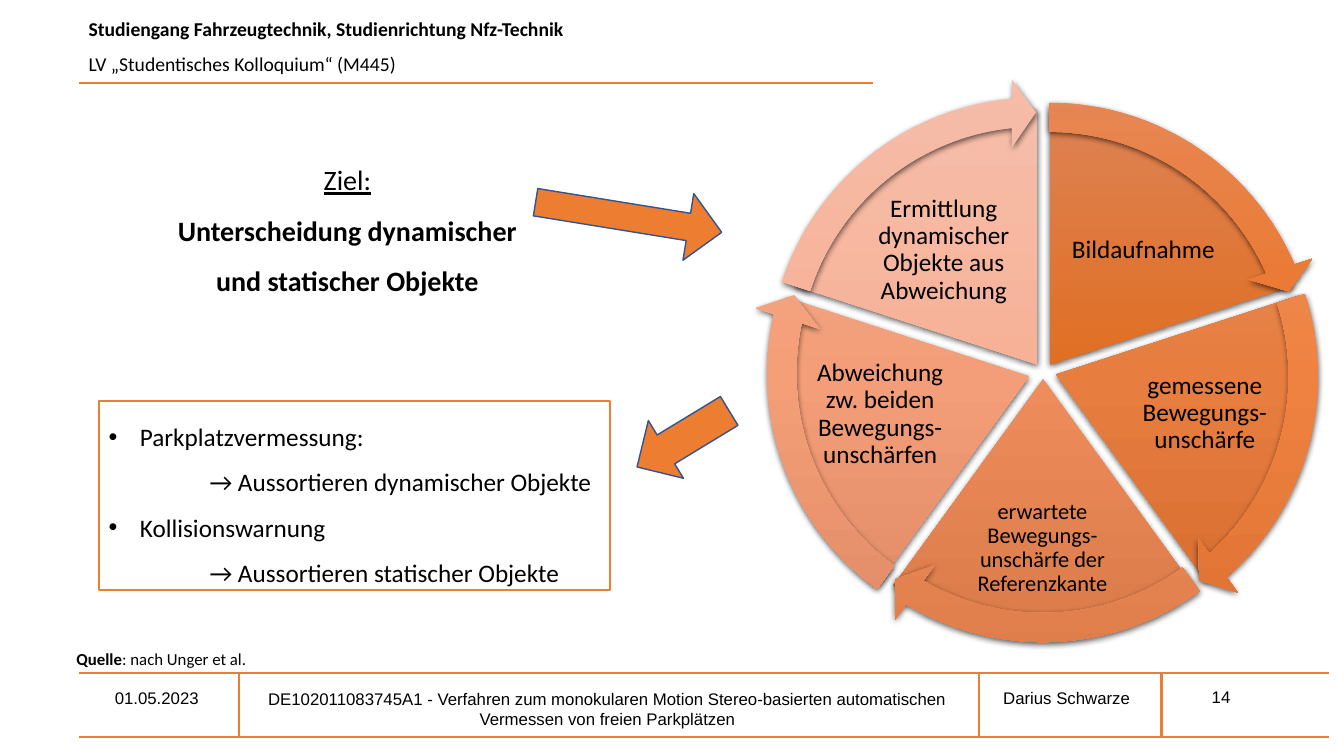
from lxml.etree import SubElement
from pptx import Presentation
from pptx.dml.color import RGBColor
from pptx.enum.shapes import MSO_CONNECTOR, MSO_SHAPE
from pptx.enum.text import MSO_ANCHOR as Anchor, PP_ALIGN as Align
from pptx.oxml.ns import qn
from pptx.util import Inches, Pt

COLORS = {"orange": "ED7D31", "outline": "325491", "text": "000000"}
FULL_TURN = 216
SEGMENT_TURN = FULL_TURN / 5
HEAD_TURN = 3.275
PIE_SIZE = 5.05
RING_SIZE = 5.67

SEGMENTS = [
    dict(step=0, text="Bildaufnahme", size=18, box=(10.53, 1.94, 1.62, 1.08),
         pie=(7.89, 1.09), pie_fill=("DD8254", "E06F23", "D06116"),
         ring=(7.57, 0.83), ring_fill=("E78756", "EB7526", "DB6618")),
    dict(step=1, text="gemessene Bewegungs-unschärfe", size=18, box=(11.2, 3.5, 1.5, 1.2),
         pie=(7.95, 1.19), pie_fill=("E48E63", "E77D3F", "D66D30"),
         ring=(7.59, 0.9), ring_fill=("EB9265", "EF8241", "DD7131")),
    dict(step=2, text="erwartete Bewegungs-unschärfe der Referenzkante", size=16,
         box=(9.62, 4.78, 1.44, 1.32),
         pie=(7.82, 1.24), pie_fill=("EB9C77", "EE8D5B", "DB7B49"),
         ring=(7.51, 0.89), ring_fill=("EF9F79", "F2905D", "DF7D4B")),
    dict(step=4, text="Ermittlung dynamischer Objekte aus Abweichung", size=18,
         box=(8.55, 1.94, 1.62, 1.08),
         pie=(7.76, 1.09), pie_fill=("F6BDA9", "F7B197", "E29B80"),
         ring=(7.44, 0.78), ring_fill=("F6BCA8", "F7B096", "E29A7F")),
    dict(step=3, text="Abweichung zw. beiden Bewegungs-unschärfen", size=18,
         box=(7.98, 3.51, 1.5, 1.2),
         pie=(7.68, 1.21), pie_fill=("F0AB8F", "F39E78", "DF8A64"),
         ring=(7.42, 0.87), ring_fill=("F2AC8F", "F59F79", "E08A65")),
]


def rgb(name):
    return RGBColor.from_string(COLORS[name])


def place(box):
    return [Inches(value) for value in box]


def set_bullet(para):
    properties = para._p.get_or_add_pPr()
    SubElement(properties, qn("a:buFont"), typeface="Arial")
    SubElement(properties, qn("a:buChar"), char="•")


def set_indent(para, left, hanging=0):
    properties = para._p.get_or_add_pPr()
    properties.set("marL", str(Inches(left)))
    properties.set("indent", str(-Inches(hanging)))


def write_para(para, spans, size, font="Calibri", **formats):
    for name, value in formats.items():
        setattr(para, name, value)
    for text, styles in spans:
        span = para.add_run()
        span.text = text
        span.font.color.rgb = rgb("text")
        for name, value in dict(styles, name=font, size=Pt(size)).items():
            setattr(span.font, name, value)


def next_para(frame, number):
    return frame.add_paragraph() if number else frame.paragraphs[0]


def add_text(shapes, box, lines, size, anchor=Anchor.TOP, inset=None, gap=0, **formats):
    frame = shapes.add_textbox(*place(box)).text_frame
    frame.word_wrap = True
    frame.vertical_anchor = anchor
    if inset is not None:
        for side in ("left", "top", "right", "bottom"):
            setattr(frame, f"margin_{side}", Inches(inset))
    for number, spans in enumerate(lines):
        para = next_para(frame, number)
        if number and gap:
            para.space_before = Pt(gap)
        write_para(para, spans, size, **formats)


def add_rule(page, left, top, right, bottom):
    rule = page.shapes.add_connector(MSO_CONNECTOR.STRAIGHT, *place((left, top, right, bottom)))
    rule.line.color.rgb = rgb("orange")
    rule.line.width = Pt(1.5)
    SubElement(rule._element.spPr, qn("a:effectLst"))


def add_block_arrow(page, box, rotation, shaft):
    arrow = page.shapes.add_shape(MSO_SHAPE.DOWN_ARROW, *place(box))
    arrow.shadow.inherit = False
    arrow.rotation = rotation
    arrow.adjustments[0] = shaft
    arrow.adjustments[1] = 0.5
    arrow.fill.solid()
    arrow.fill.fore_color.rgb = rgb("orange")
    arrow.line.color.rgb = rgb("outline")
    arrow.line.width = Pt(1)


def add_cycle_part(shapes, kind, corner, size, adjustments, shades):
    part = shapes.add_shape(kind, *place((*corner, size, size)))
    for number, value in enumerate(adjustments):
        part.adjustments[number] = value
    part.fill.gradient()
    part.fill.gradient_angle = 270
    stops = part._element.spPr.find(qn("a:gradFill")).find(qn("a:gsLst"))
    for stop in list(stops):
        stops.remove(stop)
    for number, shade in enumerate(shades):
        stop = SubElement(stops, qn("a:gs"), pos=str(number * 50000))
        SubElement(stop, qn("a:srgbClr"), val=shade)
    part.line.fill.background()
    part.shadow.inherit = False
    effects = part._element.spPr.find(qn("a:effectLst"))
    shadow = SubElement(effects, qn("a:outerShdw"), blurRad=str(Pt(4.5)), dist=str(Pt(1.5)),
                        dir="5400000", algn="ctr", rotWithShape="0")
    black = SubElement(shadow, qn("a:srgbClr"), val="000000")
    SubElement(black, qn("a:alpha"), val="63000")


def add_segment(page, segment):
    start = (162 + segment["step"] * SEGMENT_TURN) % FULL_TURN
    end = (start + SEGMENT_TURN) % FULL_TURN
    group = page.shapes.add_group_shape()
    add_cycle_part(group.shapes, MSO_SHAPE.PIE, segment["pie"], PIE_SIZE,
                   (start, end), segment["pie_fill"])
    add_text(group.shapes, segment["box"], [[(segment["text"], {})]], segment["size"],
             anchor=Anchor.MIDDLE, inset=0.03, alignment=Align.CENTER, line_spacing=0.9)
    add_cycle_part(page.shapes, MSO_SHAPE.CIRCULAR_ARROW, segment["ring"], RING_SIZE,
                   (0.051, HEAD_TURN, end - HEAD_TURN, start, 0.059), segment["ring_fill"])


def add_uses(page):
    frame_box = page.shapes.add_shape(MSO_SHAPE.RECTANGLE, *place((0.98, 3.98, 5.07, 1.87)))
    frame_box.shadow.inherit = False
    frame_box.fill.background()
    frame_box.line.color.rgb = rgb("orange")
    frame_box.line.width = Pt(1.5)
    frame = frame_box.text_frame
    frame.word_wrap = True
    frame.vertical_anchor = Anchor.TOP
    uses = ["Parkplatzvermessung:", "→ Aussortieren dynamischer Objekte",
            "Kollisionswarnung", "→ Aussortieren statischer Objekte"]
    for number, text in enumerate(uses):
        para = next_para(frame, number)
        para.line_spacing = 1.5
        if text.startswith("→"):
            set_indent(para, 1)
        else:
            set_indent(para, 0.31, 0.31)
            set_bullet(para)
        write_para(para, [(text, {})], 18, alignment=Align.LEFT)


def add_header(page):
    add_text(page.shapes, (0.78, 0.14, 9, 0.51),
             [[("Studiengang Fahrzeugtechnik, Studienrichtung Nfz-Technik", {"bold": True})],
              [("LV „Studentisches Kolloquium“ (M445)", {})]],
             14, gap=10, line_spacing=0.9)
    add_rule(page, 0.78, 0.82, 8.66, 0.82)


def add_footer(page):
    patent = ("DE102011083745A1 - Verfahren zum monokularen Motion Stereo-basierten "
              "automatischen Vermessen von freien Parkplätzen")
    cells = [((9.53, 6.72, 2.1, 0.4), "Darius Schwarze", Align.CENTER, Anchor.MIDDLE),
             ((2.33, 6.78, 7.39, 0.81), patent, Align.CENTER, Anchor.TOP),
             ((1.04, 6.77, 3.24, 0.3), "01.05.2023", Align.LEFT, Anchor.TOP),
             ((11.92, 6.76, 0.93, 0.3), "14", Align.LEFT, Anchor.TOP)]
    for box, text, alignment, anchor in cells:
        add_text(page.shapes, box, [[(text, {})]], 12, anchor=anchor,
                 font="Arial", alignment=alignment)
    for height in (6.68, 7.31):
        add_rule(page, 0.78, height, 13.18, height)
    for left in (2.37, 9.71, 11.52):
        add_rule(page, left, 6.68, left, 7.31)


def main():
    deck = Presentation()
    deck.slide_width, deck.slide_height = Inches(13.33), Inches(7.5)
    page = deck.slides.add_slide(deck.slide_layouts[6])
    add_header(page)
    add_footer(page)
    add_text(page.shapes, (1.05, 1.4, 4.79, 1.65),
             [[("Ziel:", {"underline": True})],
              [("Unterscheidung dynamischer", {"bold": True})],
              [("und statischer Objekte", {"bold": True})]],
             20, alignment=Align.CENTER, line_spacing=1.5)
    add_text(page.shapes, (0.66, 6.39, 6.66, 0.3),
             [[("Quelle", {"bold": True}), (": nach Unger et al.", {})]], 12)
    add_uses(page)
    add_block_arrow(page, (5.9, 1.22, 0.67, 1.87), 279.2, 0.41)
    add_block_arrow(page, (6.44, 3.82, 0.67, 1.07), 58.7, 0.5)
    for segment in SEGMENTS:
        add_segment(page, segment)
    deck.save("out.pptx")


if __name__ == "__main__":
    main()
